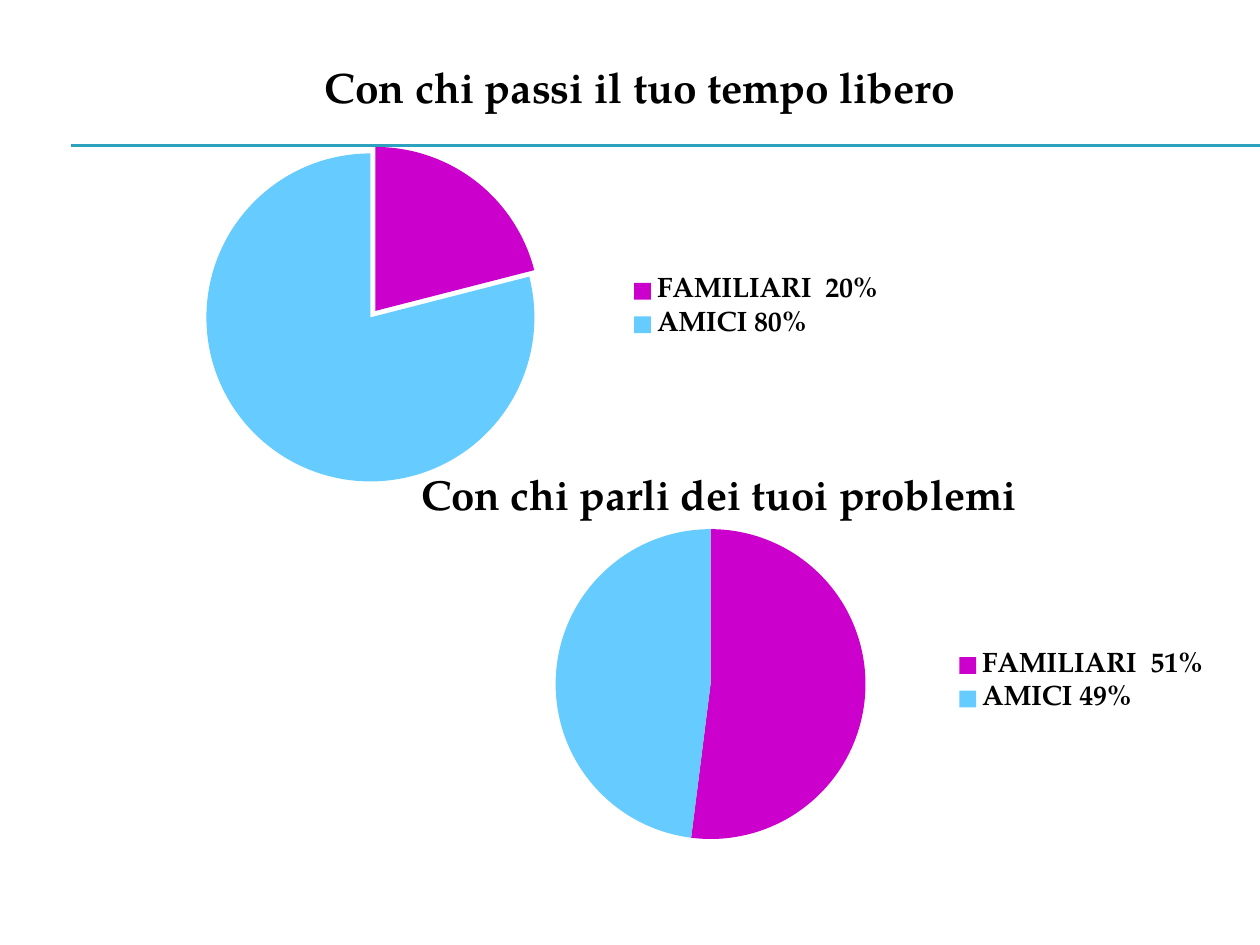
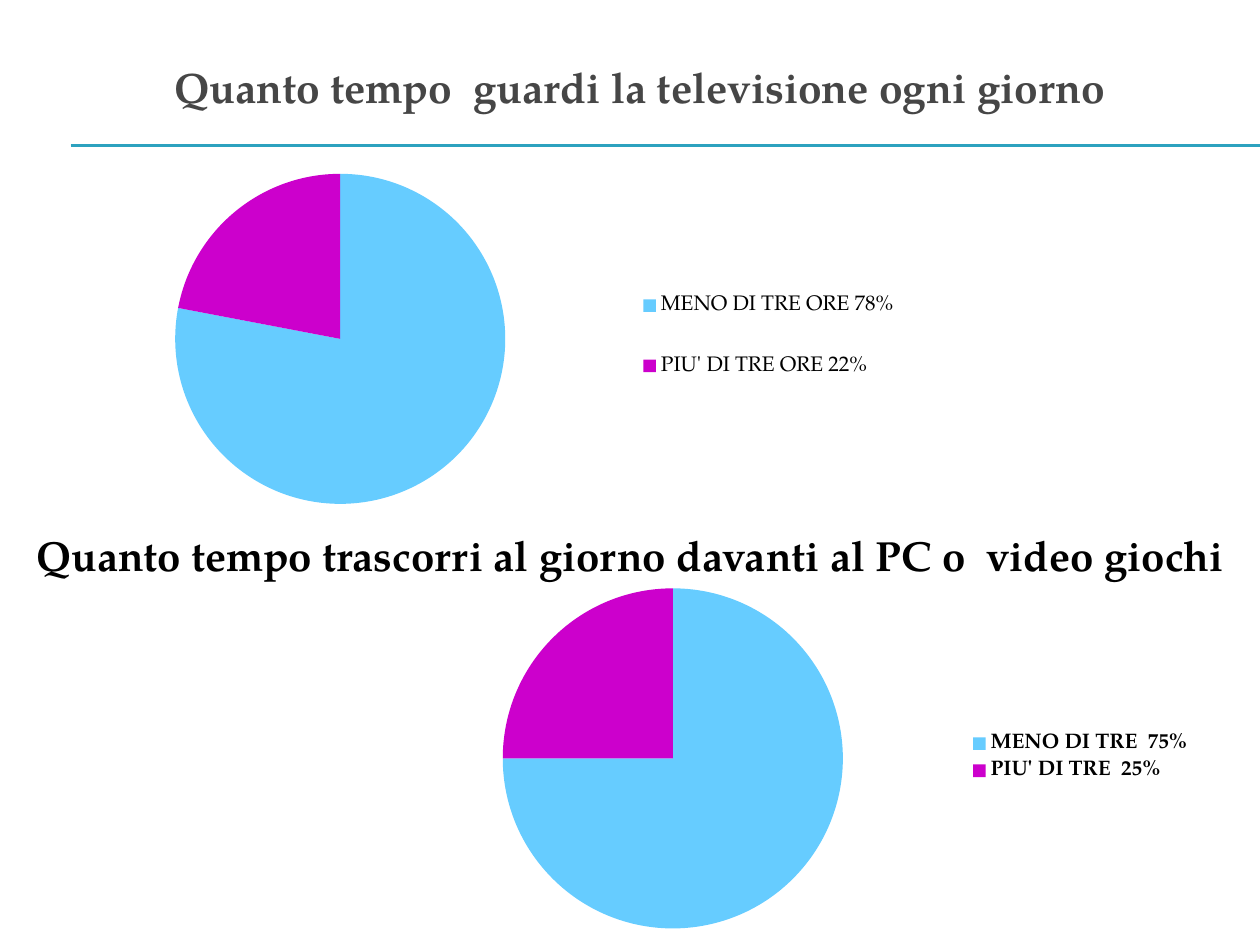
import pptx
import pptx.chart.data
import pptx.dml.color
import pptx.enum.chart
import pptx.enum.shapes
import pptx.enum.text
import pptx.oxml
import pptx.oxml.ns
import pptx.util
from pptx.util import Inches

COLORS = {
    "rule": "2DA2BF",
    "black": "000000",
    "gray": "464646",
    "magenta": "CC00CC",
    "sky": "66CCFF",
}
FONT = "TeX Gyre Pagella"


class SurveyDeck:
    def __init__(self):
        self.presentation = pptx.Presentation()
        self.presentation.slide_width = Inches(10)
        self.presentation.slide_height = Inches(7.5)
        self.slide = None

    def color(self, name):
        return pptx.dml.color.RGBColor.from_string(COLORS[name])

    def style_font(self, font, size, color="black", bold=True):
        font.name = FONT
        font.size = pptx.util.Pt(size)
        font.bold = bold
        font.color.rgb = self.color(color)

    def add_slide(self, title, title_color):
        self.slide = self.presentation.slides.add_slide(self.presentation.slide_layouts[6])
        for height in (1.15, 1.16):
            self.add_rule(height)
        self.add_heading(title, 0.33, 0.69, 9.5, 24.3, title_color)

    def add_rule(self, top):
        rule = self.slide.shapes.add_connector(
            pptx.enum.shapes.MSO_CONNECTOR.STRAIGHT,
            Inches(0.56), Inches(top), Inches(10), Inches(top))
        rule.line.color.rgb = self.color("rule")
        rule.line.width = pptx.util.Pt(0.75)
        properties = rule._element.spPr
        properties.append(pptx.oxml.parse_xml(
            f"<a:effectLst {pptx.oxml.ns.nsdecls('a')}/>"))

    def add_heading(self, text, left, middle, width, size=24, color="black"):
        height = 0.5
        shape = self.slide.shapes.add_textbox(
            Inches(left), Inches(middle - height / 2), Inches(width), Inches(height))
        frame = shape.text_frame
        frame.word_wrap = True
        frame.vertical_anchor = pptx.enum.text.MSO_ANCHOR.MIDDLE
        paragraph = frame.paragraphs[0]
        paragraph.alignment = pptx.enum.text.PP_ALIGN.CENTER
        run = paragraph.add_run()
        run.text = text
        self.style_font(run.font, size, color)

    def place_part(self, part, frame, box, inner=False):
        for layout in part.findall(pptx.oxml.ns.qn("c:layout")):
            part.remove(layout)
        left, top, width, height = frame
        fractions = {
            "x": (box[0] - left) / width,
            "y": (box[1] - top) / height,
            "w": box[2] / width,
            "h": box[3] / height,
        }
        target = '<c:layoutTarget val="inner"/>' if inner else ""
        modes = "".join(f'<c:{axis}Mode val="edge"/>' for axis in "xy")
        values = "".join(f'<c:{key} val="{value:.4f}"/>' for key, value in fractions.items())
        layout = pptx.oxml.parse_xml(
            f"<c:layout {pptx.oxml.ns.nsdecls('c')}><c:manualLayout>"
            f"{target}{modes}{values}</c:manualLayout></c:layout>")
        if inner:
            part.insert(0, layout)
        else:
            part.find(pptx.oxml.ns.qn("c:legendPos")).addnext(layout)

    def add_pie(self, frame, slices, center, radius, legend_box,
                legend_size, legend_bold=True, explosion=0):
        data = pptx.chart.data.CategoryChartData()
        data.categories = [label for label, value, color in slices]
        data.add_series("Series 1", [value for label, value, color in slices])
        chart = self.slide.shapes.add_chart(
            pptx.enum.chart.XL_CHART_TYPE.PIE, *map(Inches, frame), data).chart
        chart.has_title = False
        self.style_font(chart.font, 18, bold=False)
        plot = chart.plots[0]
        plot.vary_by_categories = True
        series = plot.series[0]
        for index, (label, value, color) in enumerate(slices):
            point_format = series.points[index].format
            point_format.fill.solid()
            point_format.fill.fore_color.rgb = self.color(color)
            point_format.line.fill.background()
        if explosion:
            first_point = series._element.find(pptx.oxml.ns.qn("c:dPt"))
            first_point.find(pptx.oxml.ns.qn("c:idx")).addnext(pptx.oxml.parse_xml(
                f'<c:explosion {pptx.oxml.ns.nsdecls("c")} val="{explosion}"/>'))
        chart.has_legend = True
        legend = chart.legend
        legend.position = pptx.enum.chart.XL_LEGEND_POSITION.RIGHT
        legend.include_in_layout = False
        self.style_font(legend.font, legend_size, bold=legend_bold)
        reach = radius * (1 + explosion / 100)
        pie_box = (center[0] - reach, center[1] - reach, 2 * reach, 2 * reach)
        self.place_part(plot._element.getparent(), frame, pie_box, inner=True)
        self.place_part(legend._element, frame, legend_box)


def main():
    deck = SurveyDeck()

    deck.add_slide("Con chi passi il tuo tempo libero", "black")
    deck.add_pie(
        (1.02, 1.02, 6.09, 2.89),
        [("FAMILIARI  20%", 21, "magenta"), ("AMICI 80%", 79, "sky")],
        (2.94, 2.52), 1.24, (4.95, 2.15, 2.1, 0.59), 16, explosion=5)
    deck.add_heading("Con chi parli dei tuoi problemi", 2.11, 3.92, 7.19)
    deck.add_pie(
        (3.75, 4.06, 5.94, 2.73),
        [("FAMILIARI  51%", 52, "magenta"), ("AMICI 49%", 48, "sky")],
        (5.64, 5.43), 1.23, (7.53, 5.12, 2.1, 0.59), 16)

    deck.add_slide("Quanto tempo  guardi la televisione ogni giorno", "gray")
    deck.add_pie(
        (0.39, 1.25, 6.8, 2.89),
        [("MENO DI TRE ORE 78%", 78, "sky"), ("PIU' DI TRE ORE 22%", 22, "magenta")],
        (2.7, 2.69), 1.31, (5.05, 2.03, 2.1, 1.27), 12, legend_bold=False)
    deck.add_heading("Quanto tempo trascorri al giorno davanti al PC o  video giochi", 0, 4.4, 10)
    deck.add_pie(
        (3.05, 4.53, 6.48, 2.97),
        [("MENO DI TRE  75%", 75, "sky"), ("PIU' DI TRE  25%", 25, "magenta")],
        (5.34, 6.02), 1.35, (7.65, 5.77, 1.85, 0.48), 12)

    deck.presentation.save("out.pptx")


if __name__ == "__main__":
    main()
